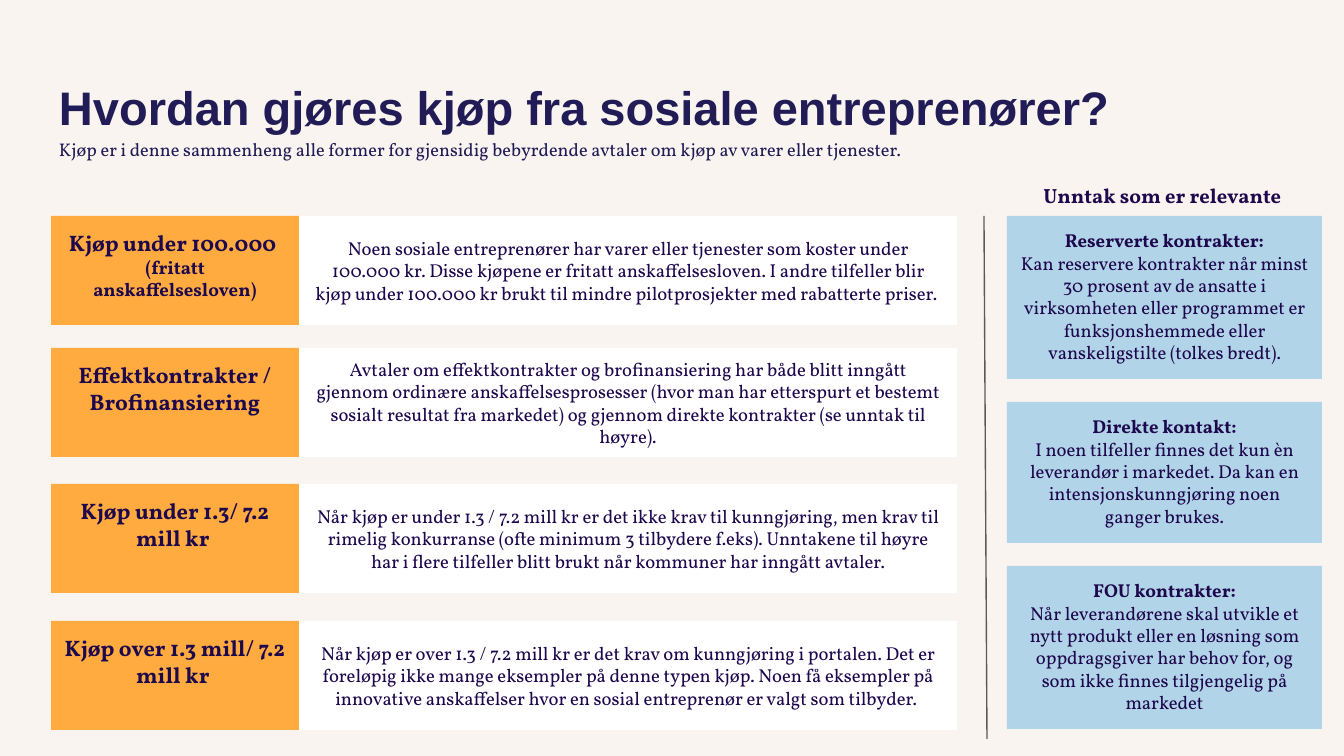
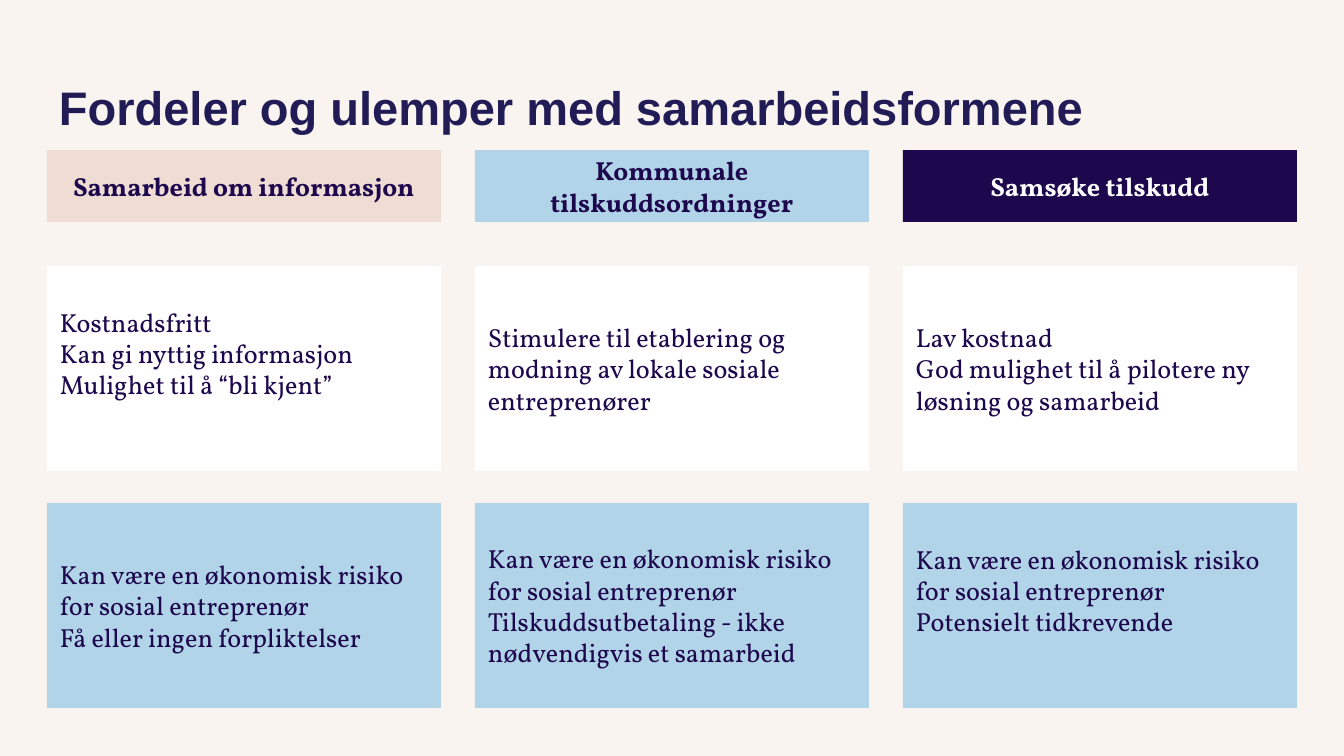
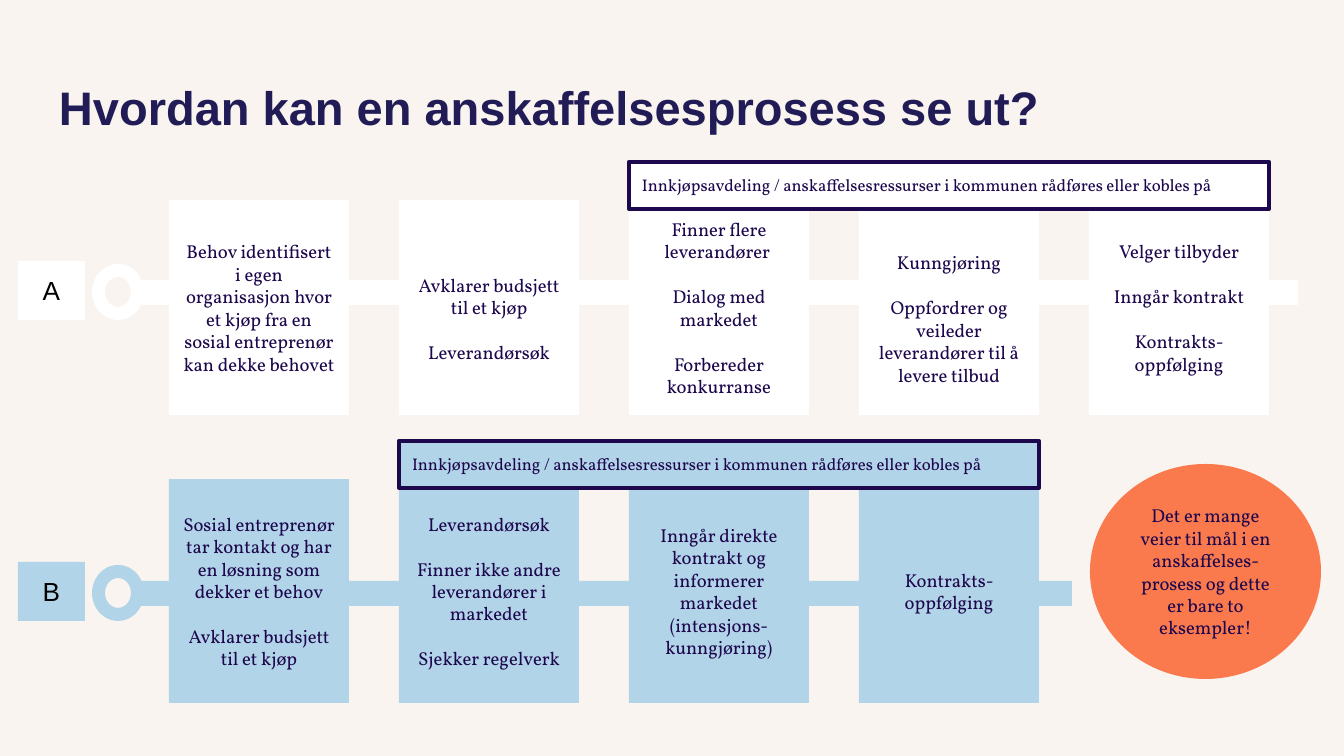
from dataclasses import dataclass, replace

from lxml.etree import SubElement
from pptx import Presentation
from pptx.dml.color import RGBColor
from pptx.enum.shapes import MSO_CONNECTOR, MSO_SHAPE
from pptx.enum.text import MSO_ANCHOR as Anchor, PP_ALIGN as Align
from pptx.oxml.ns import qn
from pptx.util import Pt

EMU_PER_PX = 914400 / 134.4
SLIDE_WIDTH, SLIDE_HEIGHT = 1344, 756
INSET = 13


@dataclass(frozen=True)
class Style:
    """Look of one paragraph."""
    size: float
    color: str = "1D074D"
    bold: bool = False
    font: str = "Vollkorn"


@dataclass(frozen=True)
class Theme:
    """Colours and type styles shared by all slides."""
    background: str = "F9F4F0"
    ink: str = "1D074D"
    white: str = "FFFFFF"
    sky: str = "B2D4E8"
    amber: str = "FFAB40"
    blush: str = "EFDDD4"
    coral: str = "FA7A4D"
    gray: str = "595959"
    title: Style = Style(25.2, "211C56", True, "Arial")
    subtitle: Style = Style(9.8, "211C56")
    label: Style = Style(12, bold=True)
    side_heading: Style = Style(11, bold=True)
    strong: Style = Style(10, bold=True)
    body: Style = Style(10)
    banner: Style = Style(9)
    column_heading: Style = Style(14, bold=True)
    column_body: Style = Style(14)
    tag: Style = Style(14, "000000", font="Arial")


@dataclass(frozen=True)
class Box:
    """Rectangle in px."""
    left: int
    top: int
    width: int
    height: int

    def inner(self, left, top, width, height):
        """Return a box placed relative to this one."""
        return Box(self.left + left, self.top + top, width, height)

    def emu(self):
        """Return the four lengths in EMU."""
        return [px(v) for v in (self.left, self.top, self.width, self.height)]


THEME = Theme()


def px(length):
    """Turn px into EMU."""
    return round(length * EMU_PER_PX)


def rgb(color):
    """Turn a hex string into a colour."""
    return RGBColor.from_string(color)


def write(shape, lines, align=Align.CENTER, anchor=Anchor.MIDDLE, gap=0,
          extra_top=0, extra_bottom=0, spacing=None):
    """Fill a shape with (text, style) paragraphs."""
    frame = shape.text_frame
    frame.word_wrap = True
    frame.vertical_anchor = anchor
    frame.margin_left = frame.margin_right = px(INSET)
    frame.margin_top = px(INSET + extra_top)
    frame.margin_bottom = px(INSET + extra_bottom)
    frame.text = "\n".join(text for text, _ in lines)
    for index, (paragraph, (_, style)) in enumerate(zip(frame.paragraphs, lines)):
        paragraph.alignment = align
        paragraph.space_before = Pt(gap if index else 0)
        if spacing:
            paragraph.line_spacing = spacing
        for run in paragraph.runs:
            run.font.name = style.font
            run.font.size = Pt(style.size)
            run.font.bold = style.bold
            run.font.color.rgb = rgb(style.color)


def add_text(slide, box, lines, **layout):
    """Add a text box."""
    write(slide.shapes.add_textbox(*box.emu()), lines, **layout)


def add_block(slide, box, fill, lines=(), kind=MSO_SHAPE.RECTANGLE, outline=None, **layout):
    """Add a flat filled shape, with text if given."""
    shape = slide.shapes.add_shape(kind, *box.emu())
    shape.shadow.inherit = False
    shape.fill.solid()
    shape.fill.fore_color.rgb = rgb(fill)
    if outline:
        shape.line.color.rgb = rgb(outline)
        shape.line.width = Pt(2.25)
    else:
        shape.line.fill.background()
    if lines:
        write(shape, lines, **layout)


def add_titled_slide(presentation, title):
    """Add a blank slide with the shared background and title."""
    slide = presentation.slides.add_slide(presentation.slide_layouts[6])
    slide.background.fill.solid()
    slide.background.fill.fore_color.rgb = rgb(THEME.background)
    add_text(slide, Box(46, 66, 1253, 85), [(title, THEME.title)],
             align=Align.LEFT, anchor=Anchor.TOP)
    return slide


def add_purchase_row(slide, box, label_lines, description):
    """Add an amber label with its white description."""
    label_width = 248
    add_block(slide, box.inner(0, 0, label_width, box.height), THEME.amber, label_lines,
              anchor=Anchor.TOP)
    add_block(slide, box.inner(label_width, 0, box.width - label_width, box.height),
              THEME.white, [(description, THEME.body)])


def add_exceptions(slide, box, heading, exceptions):
    """Add the heading and the stacked exception cards."""
    add_text(slide, box.inner(0, 0, box.width, 52), [(heading, THEME.side_heading)],
             anchor=Anchor.TOP)
    top = 45
    for height, name, text in exceptions:
        add_block(slide, box.inner(0, top, box.width, height), THEME.sky,
                  [(name, THEME.strong), (text, THEME.body)], anchor=Anchor.TOP)
        top += height + 23


def add_divider(slide, start_x, start_y, end_x, end_y):
    """Add a thin gray line."""
    line = slide.shapes.add_connector(
        MSO_CONNECTOR.STRAIGHT, *(px(v) for v in (start_x, start_y, end_x, end_y)))
    line.line.color.rgb = rgb(THEME.gray)
    line.line.width = Pt(0.75)
    SubElement(line._element.spPr, qn("a:effectLst"))


def build_purchases(presentation):
    """Build the slide on how purchases are made."""
    slide = add_titled_slide(presentation, "Hvordan gjøres kjøp fra sosiale entreprenører?")
    add_text(slide, Box(46, 129, 1027, 66),
             [("Kjøp er i denne sammenheng alle former for gjensidig bebyrdende avtaler "
               "om kjøp av varer eller tjenester.", THEME.subtitle)],
             align=Align.LEFT, anchor=Anchor.TOP, spacing=0.95)
    rows = [
        (216, [("Kjøp under 100.000 ", THEME.label),
               ("(fritatt anskaffelsesloven)", THEME.strong)],
         "Noen sosiale entreprenører har varer eller tjenester som koster under 100.000 kr. "
         "Disse kjøpene er fritatt anskaffelsesloven. I andre tilfeller blir kjøp under "
         "100.000 kr brukt til mindre pilotprosjekter med rabatterte priser. "),
        (348, [("Effektkontrakter / Brofinansiering", THEME.label)],
         "Avtaler om effektkontrakter og brofinansiering har både blitt inngått gjennom "
         "ordinære anskaffelsesprosesser (hvor man har etterspurt et bestemt sosialt resultat "
         "fra markedet) og gjennom direkte kontrakter (se unntak til høyre)."),
        (484, [("Kjøp under 1.3/ 7.2 mill kr ", THEME.label)],
         "Når kjøp er under 1.3 / 7.2 mill kr er det ikke krav til kunngjøring, men krav til "
         "rimelig konkurranse (ofte minimum 3 tilbydere f.eks). Unntakene til høyre har i "
         "flere tilfeller blitt brukt når kommuner har inngått avtaler."),
        (621, [("Kjøp over 1.3 mill/ 7.2 mill kr ", THEME.label)],
         "Når kjøp er over 1.3 / 7.2 mill kr er det krav om kunngjøring i portalen. Det er "
         "foreløpig ikke mange eksempler på denne typen kjøp. Noen få eksempler på "
         "innovative anskaffelser hvor en sosial entreprenør er valgt som tilbyder. "),
    ]
    for top, label_lines, description in rows:
        add_purchase_row(slide, Box(51, top, 906, 109), label_lines, description)
    add_divider(slide, 984, 216, 987, 739)
    add_exceptions(slide, Box(1007, 171, 315, 558), "Unntak som er relevante ", [
        (163, "Reserverte kontrakter:",
         "Kan reservere kontrakter når minst 30 prosent av de ansatte i virksomheten eller "
         "programmet er funksjonshemmede eller vanskeligstilte (tolkes bredt)."),
        (141, "Direkte kontakt:",
         "I noen tilfeller finnes det kun èn leverandør i markedet. Da kan en "
         "intensjonskunngjøring noen ganger brukes."),
        (163, "FOU kontrakter:",
         "Når leverandørene skal utvikle et nytt produkt eller en løsning som oppdragsgiver "
         "har behov for, og som ikke finnes tilgjengelig på markedet"),
    ])


def add_comparison_column(slide, box, heading, fill, text_color, cards):
    """Add a heading band above the advantage and drawback cards."""
    add_block(slide, box.inner(0, 0, box.width, 72), fill,
              [(heading, replace(THEME.column_heading, color=text_color))])
    for top, card_fill, (texts, extra_bottom) in zip((116, 353), (THEME.white, THEME.sky), cards):
        add_block(slide, box.inner(0, top, box.width, 205), card_fill,
                  [(text, THEME.column_body) for text in texts],
                  align=Align.LEFT, extra_bottom=extra_bottom)


def build_comparison(presentation):
    """Build the slide on advantages and drawbacks."""
    slide = add_titled_slide(presentation, "Fordeler og ulemper med samarbeidsformene")
    risk = "Kan være en økonomisk risiko for sosial entreprenør"
    columns = [
        ("Samarbeid om informasjon", THEME.blush, THEME.ink, [
            (["Kostnadsfritt", "Kan gi nyttig informasjon", "Mulighet til å “bli kjent”"], 31),
            ([risk, "Få eller ingen forpliktelser"], 0)]),
        ("Kommunale tilskuddsordninger", THEME.sky, THEME.ink, [
            (["Stimulere til etablering og modning av lokale sosiale entreprenører"], 0),
            ([risk, "Tilskuddsutbetaling - ikke nødvendigvis et samarbeid"], 0)]),
        ("Samsøke tilskudd", THEME.ink, THEME.white, [
            (["Lav kostnad", "God mulighet til å pilotere ny løsning og samarbeid"], 0),
            ([risk, "Potensielt tidkrevende"], 31)]),
    ]
    for index, column in enumerate(columns):
        add_comparison_column(slide, Box(47 + 428 * index, 150, 394, 558), *column)


def add_process_lane(slide, box, axis, fill, tag, steps, banner_step, banner_text):
    """Add a tagged track with its steps and a banner across three of them."""
    step_left, step_width, pitch = 151, 180, 230
    add_block(slide, box.inner(0, axis - 31, 67, 59), fill, [(tag, THEME.tag)],
              anchor=Anchor.TOP)
    add_block(slide, box.inner(74, axis - 28, 52, 56), fill, kind=MSO_SHAPE.DONUT)
    add_block(slide, box.inner(120, axis - 12, box.width - 120, 25), fill)
    for index, (texts, extra_top) in enumerate(steps):
        add_block(slide, box.inner(step_left + pitch * index, 0, step_width, box.height), fill,
                  [(text, THEME.body) for text in texts], gap=12, extra_top=extra_top)
    add_block(slide, box.inner(step_left + pitch * banner_step, -38, 2 * pitch + step_width, 47),
              fill, [(banner_text, THEME.banner)], outline=THEME.ink,
              align=Align.LEFT, anchor=Anchor.TOP)


def build_process(presentation):
    """Build the slide with two procurement processes."""
    slide = add_titled_slide(presentation, "Hvordan kan en anskaffelsesprosess se ut?")
    banner = "Innkjøpsavdeling / anskaffelsesressurser i kommunen rådføres eller kobles på"
    add_process_lane(slide, Box(18, 200, 1280, 215), 92, THEME.white, "A", [
        (["Behov identifisert i egen organisasjon hvor et kjøp fra en sosial entreprenør "
          "kan dekke behovet"], 0),
        (["Avklarer budsjett til et kjøp", "Leverandørsøk"], 22),
        (["Finner flere leverandører ", "Dialog med markedet", "Forbereder konkurranse"], 0),
        (["Kunngjøring", "Oppfordrer og veileder leverandører til å levere tilbud"], 22),
        (["Velger tilbyder", "Inngår kontrakt", "Kontrakts- oppfølging"], 0),
    ], 2, banner)
    add_process_lane(slide, Box(18, 479, 1054, 224), 114, THEME.sky, "B", [
        (["Sosial entreprenør tar kontakt og har en løsning som dekker et behov",
          "Avklarer budsjett til et kjøp"], 0),
        (["Leverandørsøk", "Finner ikke andre leverandører i markedet",
          "Sjekker regelverk"], 0),
        (["Inngår direkte kontrakt og informerer markedet (intensjons- kunngjøring)"], 0),
        (["Kontrakts- oppfølging"], 0),
    ], 1, banner)
    add_block(slide, Box(1090, 464, 231, 215), THEME.coral,
              [("Det er mange veier til mål i en anskaffelses- prosess og dette er bare "
                "to eksempler!", THEME.body)], kind=MSO_SHAPE.OVAL)


def main():
    """Build and save the presentation."""
    presentation = Presentation()
    presentation.slide_width = px(SLIDE_WIDTH)
    presentation.slide_height = px(SLIDE_HEIGHT)
    build_purchases(presentation)
    build_comparison(presentation)
    build_process(presentation)
    presentation.save("out.pptx")


if __name__ == "__main__":
    main()
